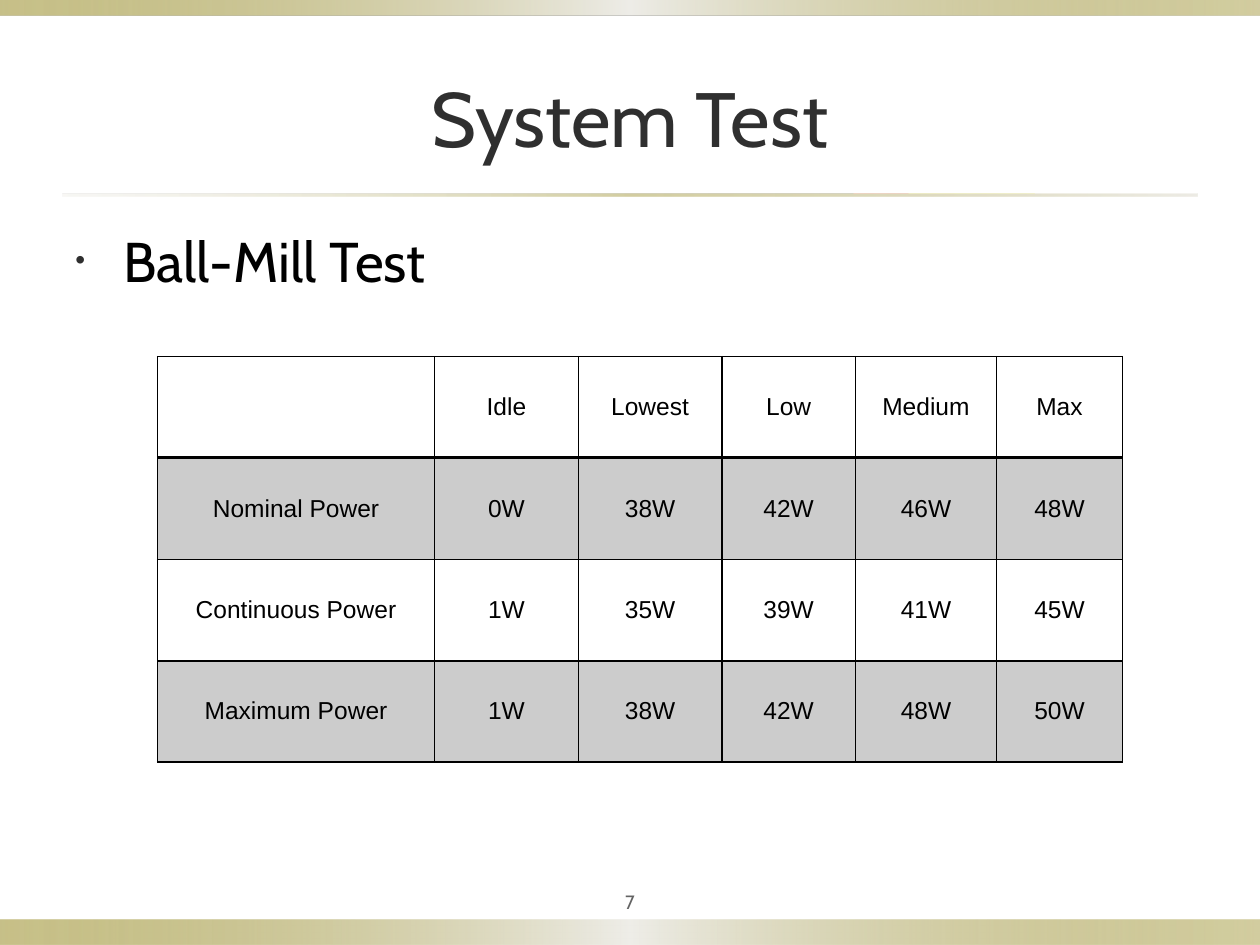
"""Build the System Test slide with its power table."""
from lxml import etree
from pptx import Presentation
from pptx.dml.color import RGBColor
from pptx.enum import shapes, text
from pptx.oxml.ns import qn
from pptx.util import Inches, Pt

TITLE = "System Test"
TOPIC = "Ball-Mill Test"
PAGE = "7"
POWER = [
    ["", "Idle", "Lowest", "Low", "Medium", "Max"],
    ["Nominal Power", "0W", "38W", "42W", "46W", "48W"],
    ["Continuous Power", "1W", "35W", "39W", "41W", "45W"],
    ["Maximum Power", "1W", "38W", "42W", "48W", "50W"],
]
COLUMN_WIDTHS = [2.2, 1.14, 1.14, 1.06, 1.12, 1]
ROW_HEIGHT = 0.805
BAND = [(0, "918415", 50), (50, "EEEDE8", 100), (100, "918415", 40)]
RULE = [(0, "DCD9CC", 20), (50, "918415", 40), (100, "DCD9CC", 50)]
STRIPS = [
    ((0, 7.3, 10, 0.2), BAND),
    ((0, 0, 10, 0.12), BAND),
    ((0.5, 1.54, 9, 0.02), RULE),
]


def add(parent, tag, **attributes):
    child = etree.SubElement(parent, qn(tag))
    for key, value in attributes.items():
        child.set(key, str(value))
    return child


def add_color(parent, color, opacity=100):
    rgb = add(parent, "a:srgbClr", val=color)
    if opacity < 100:
        add(rgb, "a:alpha", val=opacity * 1000)


def add_strip(slide, box, stops):
    strip = slide.shapes.add_shape(
        shapes.MSO_SHAPE.RECTANGLE, *[Inches(n) for n in box])
    strip.shadow.inherit = False
    strip.line.fill.background()
    strip.fill.gradient()
    strip.fill.gradient_angle = 0
    stop_list = strip._element.spPr.find(".//" + qn("a:gsLst"))
    for old in list(stop_list):
        stop_list.remove(old)
    for position, color, opacity in stops:
        add_color(add(stop_list, "a:gs", pos=position * 1000), color, opacity)


def write(frame, words, size, color, font="Cabin", align=text.PP_ALIGN.CENTER):
    frame.text = words
    paragraph = frame.paragraphs[0]
    paragraph.alignment = align
    for run in paragraph.runs:
        run.font.size = Pt(size)
        run.font.name = font
        run.font.bold = False
        run.font.color.rgb = RGBColor.from_string(color)
    return paragraph


def add_frame(slide, box, anchor=text.MSO_ANCHOR.MIDDLE):
    frame = slide.shapes.add_textbox(*[Inches(n) for n in box]).text_frame
    frame.word_wrap = True
    frame.vertical_anchor = anchor
    return frame


def add_topic(slide):
    frame = add_frame(slide, (0.5, 1.75, 9, 5.13), text.MSO_ANCHOR.TOP)
    topic = write(frame, TOPIC, 32, "000000", align=text.PP_ALIGN.LEFT)
    topic.space_before = Pt(6.4)
    properties = topic._p.get_or_add_pPr()
    properties.set("marL", str(Inches(0.38)))
    properties.set("indent", str(Inches(-0.38)))
    add_color(add(properties, "a:buClr"), "2F2F2F")
    add(properties, "a:buSzPct", val=50000)
    add(properties, "a:buFont", typeface="Arial")
    add(properties, "a:buChar", char="•")


def add_borders(cell, bottom, top):
    widths = {"a:lnL": 1, "a:lnR": 1, "a:lnT": top, "a:lnB": bottom}
    for side, width in widths.items():
        line = add(cell._tc.get_or_add_tcPr(), side, w=Pt(width))
        add_color(add(line, "a:solidFill"), "000000")


def add_power_table(slide):
    table = slide.shapes.add_table(
        len(POWER), len(COLUMN_WIDTHS), Inches(1.25), Inches(2.83),
        Inches(sum(COLUMN_WIDTHS)), Inches(ROW_HEIGHT * len(POWER))).table
    table.first_row = table.horz_banding = False
    for column, width in zip(table.columns, COLUMN_WIDTHS):
        column.width = Inches(width)
    for r, values in enumerate(POWER):
        table.rows[r].height = Inches(ROW_HEIGHT)
        for c, value in enumerate(values):
            cell = table.cell(r, c)
            write(cell.text_frame, value, 14, "000000", "Arial")
            cell.vertical_anchor = text.MSO_ANCHOR.MIDDLE
            add_borders(cell, bottom=2 if r == 0 else 1, top=2 if r == 1 else 1)
            if r % 2:
                fill = add(cell._tc.tcPr, "a:solidFill")
                add_color(fill, "000000", 20)
            else:
                cell.fill.background()


def main():
    deck = Presentation()
    deck.slide_width, deck.slide_height = Inches(10), Inches(7.5)
    slide = deck.slides.add_slide(deck.slide_layouts[6])
    for box, stops in STRIPS:
        add_strip(slide, box, stops)
    write(add_frame(slide, (0.5, 0.3, 9, 1.25)), TITLE, 44, "2F2F2F")
    add_topic(slide)
    page = add_frame(slide, (4.5, 7, 1, 0.31))
    page.margin_left = page.margin_right = Inches(0.05)
    page.margin_top = page.margin_bottom = Inches(0.05)
    write(page, PAGE, 11, "636363")
    add_power_table(slide)
    deck.save("out.pptx")


if __name__ == "__main__":
    main()
